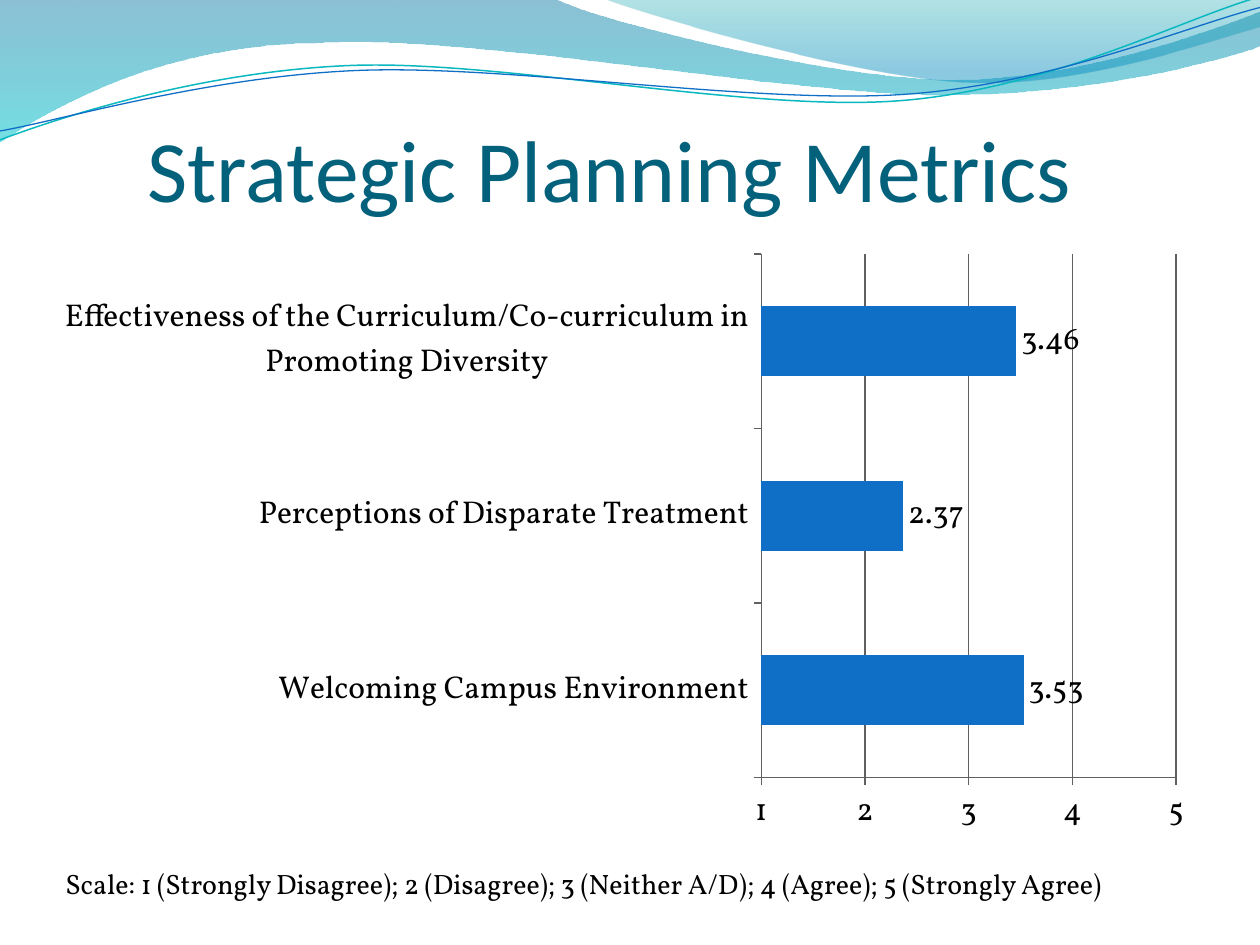
from dataclasses import dataclass
from math import cos, radians, sin
from typing import NamedTuple, Optional

from lxml.etree import SubElement
from pptx import Presentation
from pptx.chart.data import CategoryChartData
from pptx.dml.color import RGBColor
from pptx.enum.chart import XL_CHART_TYPE as ChartType
from pptx.enum.chart import XL_LABEL_POSITION as LabelPosition
from pptx.enum.chart import XL_TICK_MARK as TickMark
from pptx.enum.text import MSO_ANCHOR as Anchor
from pptx.enum.text import MSO_AUTO_SIZE as AutoSize
from pptx.oxml.ns import qn
from pptx.util import Inches, Pt

COLORS = {
    "title": "04617B",
    "text": "000000",
    "bar": "0F6FC6",
    "teal": "0AB8BF",
    "axis": "606060",
}
TILT = 2.7

Point = tuple[float, float]


class Stop(NamedTuple):
    position: float
    color: str
    opacity: int


@dataclass
class Wave:
    start: Point
    segments: list[tuple[Point, ...]]
    stops: tuple[Stop, ...] = ()
    line: Optional[str] = None
    line_width: float = 0
    pivot: Optional[Point] = None


@dataclass
class Label:
    text: str
    box: tuple[float, float, float, float]
    font: dict
    color: str
    frame: dict


WAVES = [
    Wave(
        (0, -0.01),
        [
            ((4.4, -0.01),),
            ((4.76, 0.17), (6.64, 0.63), (7.58, 0.63)),
            ((8.53, 0.63), (9.58, 0.26), (10, 0.09)),
            ((10.01, 0.36),),
            ((9.83, 0.44), (8.7, 0.76), (7.46, 0.75)),
            ((6.22, 0.75), (3.82, 0.28), (2.57, 0.34)),
            ((1.29, 0.35), (0.46, 0.83), (-0.01, 1.13)),
            ((0, -0.01),),
        ],
        stops=(Stop(0, "0074A1", 45), Stop(1, "00C6CF", 55)),
    ),
    Wave(
        (4.79, -0.01),
        [
            ((5.09, 0.11), (6.82, 0.62), (7.69, 0.65)),
            ((8.56, 0.69), (9.61, 0.32), (10, 0.21)),
            ((10, 0),),
            ((4.79, -0.01),),
        ],
        stops=(Stop(0, "00A1A9", 30), Stop(0.8, "008BBF", 45)),
    ),
    Wave(
        (0, 1.11),
        [
            ((0.48, 0.93), (1.58, 0.57), (2.77, 0.52)),
            ((3.95, 0.47), (5.93, 0.89), (7.13, 0.8)),
            ((8.33, 0.71), (9.38, 0.15), (9.98, -0.02)),
        ],
        line="teal",
        line_width=0.85,
        pivot=(4.99, 0.58),
    ),
    Wave(
        (0, 1.04),
        [
            ((0.47, 0.96), (1.64, 0.61), (2.83, 0.56)),
            ((4.03, 0.51), (5.97, 0.83), (7.17, 0.75)),
            ((8.36, 0.67), (9.41, 0.21), (10, 0.06)),
        ],
        line="bar",
        line_width=0.75,
        pivot=(5, 0.59),
    ),
]

TITLE = Label(
    "Strategic Planning Metrics",
    (1.17, 0.5, 8.42, 1.25),
    {"name": "Calibri", "size": Pt(50)},
    "title",
    {"vertical_anchor": Anchor.BOTTOM, "margin_left": 0, "margin_right": 0, "margin_bottom": 0},
)
SCALE_NOTE = Label(
    "Scale: 1 (Strongly Disagree); 2 (Disagree); 3 (Neither A/D); 4 (Agree); 5 (Strongly Agree)",
    (0.42, 6.83, 9.58, 0.37),
    {"name": "Vollkorn", "size": Pt(16)},
    "text",
    {"auto_size": AutoSize.SHAPE_TO_FIT_TEXT},
)
SCORES = {
    "Welcoming Campus Environment": 3.53,
    "Perceptions of Disparate Treatment": 2.37,
    "Effectiveness of the Curriculum/Co-curriculum in Promoting Diversity": 3.46,
}


def rgb(name: str) -> RGBColor:
    return RGBColor.from_string(COLORS[name])


def apply(target, values: dict) -> None:
    for name, value in values.items():
        setattr(target, name, value)


def level(point: Point, pivot: Optional[Point]) -> Point:
    if pivot is None:
        return point
    angle = radians(TILT)
    dx, dy = point[0] - pivot[0], point[1] - pivot[1]
    return (
        pivot[0] + dx * cos(angle) - dy * sin(angle),
        pivot[1] + dx * sin(angle) + dy * cos(angle),
    )


def bend(shape, segments: list[tuple[Point, ...]]) -> None:
    lines = iter(list(shape.element.iter(qn("a:lnTo"))))
    for segment in segments:
        steps = [next(lines) for _ in segment]
        if len(steps) == 3:
            curve = steps[0]
            curve.tag = qn("a:cubicBezTo")
            for step in steps[1:]:
                curve.append(step[0])
                step.getparent().remove(step)


def draw_wave(slide, wave: Wave) -> None:
    corners = [wave.start, *(point for segment in wave.segments for point in segment)]
    points = [tuple(map(Inches, level(corner, wave.pivot))) for corner in corners]
    builder = slide.shapes.build_freeform(*points[0])
    builder.add_line_segments(points[1:], close=bool(wave.stops))
    shape = builder.convert_to_shape()
    bend(shape, wave.segments)
    shape.shadow.inherit = False
    if wave.line:
        shape.rotation = 360 - TILT
        shape.fill.background()
        shape.line.color.rgb = rgb(wave.line)
        shape.line.width = Pt(wave.line_width)
        return
    shape.line.fill.background()
    shape.fill.gradient()
    shape.fill.gradient_angle = 270
    for target, stop in zip(shape.fill.gradient_stops, wave.stops):
        target.position = stop.position
        target.color.rgb = RGBColor.from_string(stop.color)
    for color, stop in zip(shape.element.spPr.iter(qn("a:srgbClr")), wave.stops):
        SubElement(color, qn("a:alpha"), val=str(stop.opacity * 1000))


def draw_label(slide, label: Label) -> None:
    frame = slide.shapes.add_textbox(*map(Inches, label.box)).text_frame
    apply(frame, {"word_wrap": True, **label.frame})
    run = frame.paragraphs[0].add_run()
    run.text = label.text
    apply(run.font, label.font)
    run.font.color.rgb = rgb(label.color)


def draw_chart(slide) -> None:
    data = CategoryChartData()
    data.categories = list(SCORES)
    data.add_series("Series 1", list(SCORES.values()))
    box = map(Inches, (0.33, 1.92, 9.25, 4.8))
    chart = slide.shapes.add_chart(ChartType.BAR_CLUSTERED, *box, data).chart
    apply(chart, {"has_legend": False, "has_title": False})
    apply(chart.font, {"name": "Vollkorn", "size": Pt(18)})
    chart.font.color.rgb = rgb("text")

    plot = chart.plots[0]
    apply(plot, {"gap_width": 150, "vary_by_categories": False, "has_data_labels": True})
    apply(plot.data_labels, {"show_value": True, "position": LabelPosition.OUTSIDE_END})
    fill = plot.series[0].format.fill
    fill.solid()
    fill.fore_color.rgb = rgb("bar")

    value_axis = chart.value_axis
    apply(value_axis, {"minimum_scale": 1, "maximum_scale": 5, "major_unit": 1, "has_major_gridlines": True})
    apply(value_axis.tick_labels, {"number_format": "General", "number_format_is_linked": False})
    for axis in (chart.category_axis, value_axis):
        axis.major_tick_mark = TickMark.OUTSIDE
    for part in (chart.category_axis, value_axis, value_axis.major_gridlines):
        part.format.line.color.rgb = rgb("axis")
        part.format.line.width = Pt(0.75)


def main() -> None:
    presentation = Presentation()
    apply(presentation, {"slide_width": Inches(10), "slide_height": Inches(7.5)})
    slide = presentation.slides.add_slide(presentation.slide_layouts[6])
    for wave in WAVES:
        draw_wave(slide, wave)
    draw_label(slide, TITLE)
    draw_chart(slide)
    draw_label(slide, SCALE_NOTE)
    presentation.save("out.pptx")


if __name__ == "__main__":
    main()
